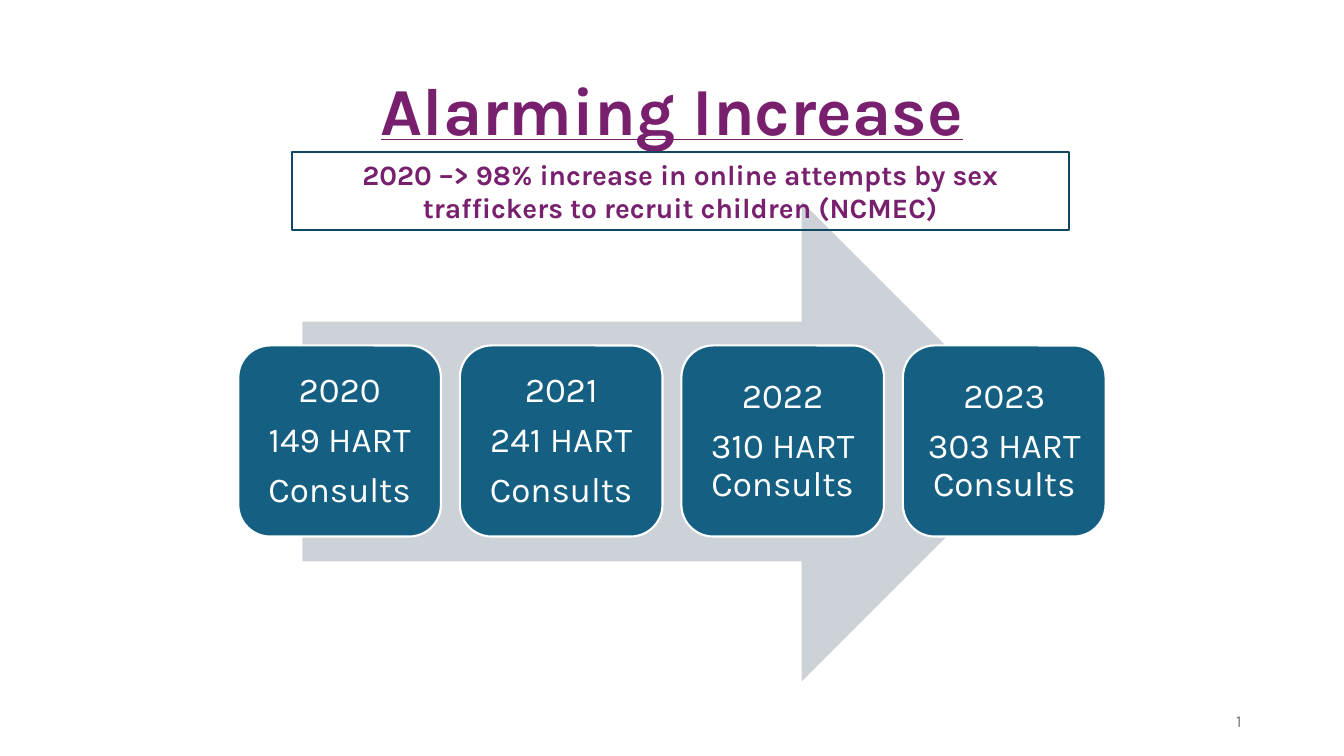
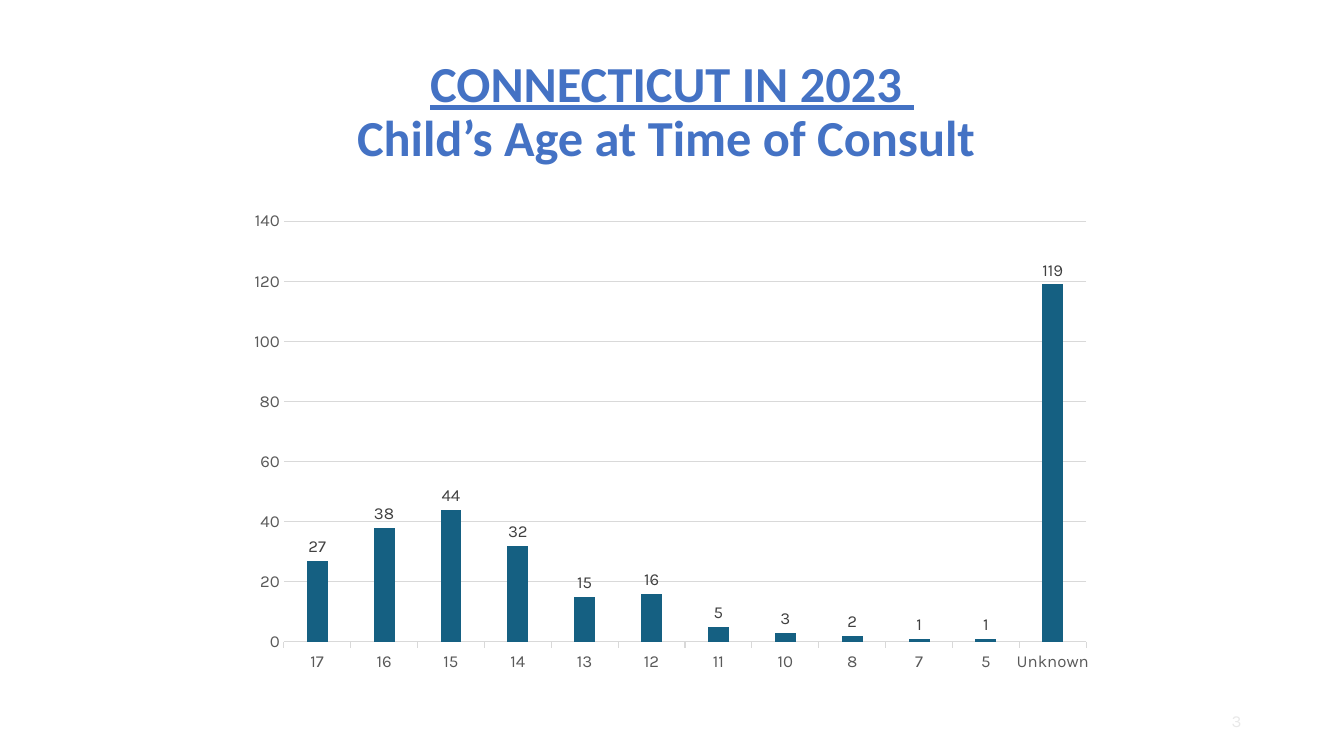
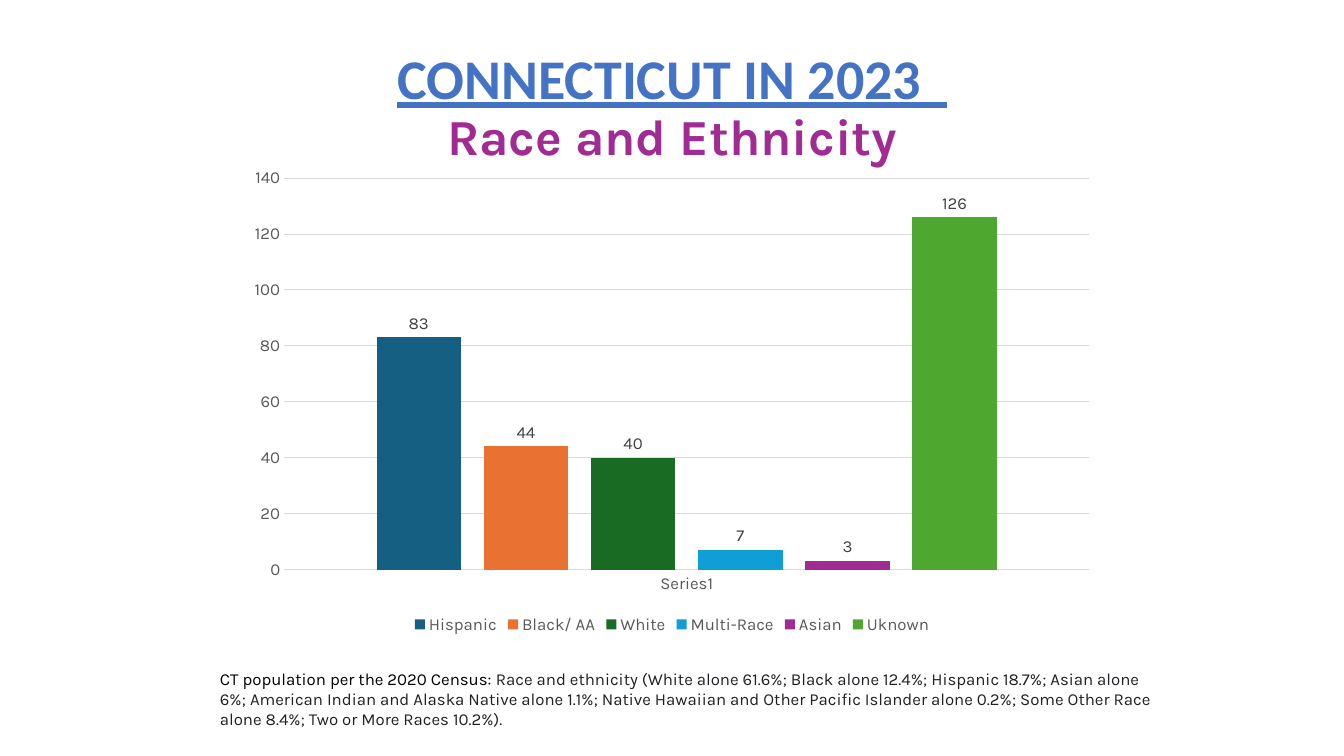
from dataclasses import dataclass

from pptx import Presentation
from pptx.chart.data import CategoryChartData
from pptx.dml.color import RGBColor
from pptx.enum.chart import XL_CHART_TYPE, XL_LABEL_POSITION, XL_LEGEND_POSITION, XL_TICK_MARK
from pptx.enum.shapes import MSO_SHAPE
from pptx.enum.text import MSO_ANCHOR, PP_ALIGN
from pptx.util import Emu, Pt

RECTANGLE = MSO_SHAPE.RECTANGLE
ROUNDED = MSO_SHAPE.ROUNDED_RECTANGLE
RIGHT_ARROW = MSO_SHAPE.RIGHT_ARROW
LEFT, CENTER, RIGHT = PP_ALIGN.LEFT, PP_ALIGN.CENTER, PP_ALIGN.RIGHT
TOP, MIDDLE = MSO_ANCHOR.TOP, MSO_ANCHOR.MIDDLE
COLUMNS = XL_CHART_TYPE.COLUMN_CLUSTERED
OUTSIDE_END = XL_LABEL_POSITION.OUTSIDE_END
LEGEND_BOTTOM = XL_LEGEND_POSITION.BOTTOM
TICK_NONE, TICK_OUTSIDE = XL_TICK_MARK.NONE, XL_TICK_MARK.OUTSIDE

BLANK_LAYOUT = 6
EMU_PER_PX = 9525


@dataclass(frozen=True)
class Theme:
    body_font: str = "Karla"
    heading_font: str = "Calibri"
    plum: str = "78206E"
    blue: str = "4472C4"
    teal: str = "156082"
    dark_teal: str = "104862"
    orange: str = "E97132"
    dark_green: str = "196B24"
    sky: str = "0F9ED5"
    magenta: str = "A02B93"
    green: str = "4EA72E"
    arrow_gray: str = "CCD2D8"
    grid_gray: str = "D9D9D9"
    axis_gray: str = "595959"
    label_gray: str = "404040"
    number_gray: str = "797979"
    faint_gray: str = "E8E8E8"
    ink: str = "202124"
    black: str = "000000"
    white: str = "FFFFFF"
    small: int = 12
    callout: int = 20
    card: int = 25
    heading: int = 36
    large_heading: int = 40
    display: int = 48


THEME = Theme()


def px(length):
    return Emu(length * EMU_PER_PX)


def set_format(target, **values):
    for name, value in values.items():
        setattr(target, name, value)


def set_font(font, size, color, name=THEME.body_font, **values):
    set_format(font, size=Pt(size), name=name, **values)
    font.color.rgb = RGBColor.from_string(color)


def set_line(line, color=None, width=0.75):
    if color is None:
        line.fill.background()
    else:
        line.color.rgb = RGBColor.from_string(color)
        line.width = Pt(width)


class Deck:
    """Holds the presentation, its theme and the slide being filled."""

    def __init__(self, theme):
        self.theme = theme
        self.presentation = Presentation()
        set_format(self.presentation, slide_width=px(1280), slide_height=px(720))
        self.slide = None

    def new_slide(self):
        layout = self.presentation.slide_layouts[BLANK_LAYOUT]
        self.slide = self.presentation.slides.add_slide(layout)

    def fill_text(self, shape, paragraphs, alignment=LEFT, anchor=TOP, line_break=False,
                  **spacing):
        """Each paragraph is a list of (text, font values); line_break separates its runs."""
        frame = shape.text_frame
        set_format(frame, word_wrap=True, vertical_anchor=anchor)
        for index, runs in enumerate(paragraphs):
            paragraph = frame.add_paragraph() if index else frame.paragraphs[0]
            set_format(paragraph, alignment=alignment, **spacing)
            for position, (text, font_values) in enumerate(runs):
                if line_break and position:
                    paragraph.add_line_break()
                run = paragraph.add_run()
                run.text = text
                set_font(run.font, **font_values)

    def text(self, box, paragraphs, **layout):
        shape = self.slide.shapes.add_textbox(*map(px, box))
        self.fill_text(shape, paragraphs, **layout)

    def title(self, box, *lines):
        lines = [(text, {"bold": True, **values}) for text, values in lines]
        self.text(box, [lines], alignment=CENTER, anchor=MIDDLE, line_break=True, line_spacing=0.9)

    def shape(self, kind, box, fill=None, line=None, width=0.75):
        shape = self.slide.shapes.add_shape(kind, *map(px, box))
        shape.shadow.inherit = False
        if fill is None:
            shape.fill.background()
        else:
            shape.fill.solid()
            shape.fill.fore_color.rgb = RGBColor.from_string(fill)
        set_line(shape.line, line, width)
        return shape

    def card(self, box, lines):
        shape = self.shape(ROUNDED, box, self.theme.teal, self.theme.white, 1.5)
        sides = ("left", "top", "right", "bottom")
        set_format(shape.text_frame, **{f"margin_{side}": px(10) for side in sides})
        font = {"size": self.theme.card, "color": self.theme.white}
        self.fill_text(shape, [[(line, font)] for line in lines], alignment=CENTER,
                       anchor=MIDDLE, line_spacing=0.9, space_after=Pt(8.75))

    def callout(self, box, text):
        shape = self.shape(RECTANGLE, box, line=self.theme.dark_teal, width=1.25)
        font = {"size": self.theme.callout, "color": self.theme.plum, "bold": True}
        self.fill_text(shape, [[(text, font)]], alignment=CENTER)

    def page_number(self, number, color):
        font = {"size": self.theme.small, "color": color}
        self.text((904, 667, 288, 38), [[(number, font)]], alignment=RIGHT, anchor=MIDDLE)

    def column_chart(self, box, categories, series, tick=TICK_NONE, legend=False):
        """Each series is (name, values, color)."""
        theme = self.theme
        data = CategoryChartData()
        data.categories = categories
        for name, values, _ in series:
            data.add_series(name, values)
        chart = self.slide.shapes.add_chart(COLUMNS, *map(px, box), data).chart
        set_format(chart, has_title=False, has_legend=legend)
        set_font(chart.font, theme.small, theme.axis_gray)
        if legend:
            set_format(chart.legend, position=LEGEND_BOTTOM, include_in_layout=False)
            set_font(chart.legend.font, theme.small, theme.axis_gray)

        plot = chart.plots[0]
        set_format(plot, gap_width=219, overlap=-27, vary_by_categories=False)
        for column, (_, _, color) in zip(plot.series, series):
            column.format.fill.solid()
            column.format.fill.fore_color.rgb = RGBColor.from_string(color)
            labels = column.data_labels
            set_format(labels, show_value=True, position=OUTSIDE_END)
            set_font(labels.font, theme.small, theme.label_gray)

        category_axis, value_axis = chart.category_axis, chart.value_axis
        for axis, mark, line in ((category_axis, tick, theme.grid_gray),
                                 (value_axis, TICK_NONE, None)):
            set_format(axis, major_tick_mark=mark, minor_tick_mark=TICK_NONE)
            set_font(axis.tick_labels.font, theme.small, theme.axis_gray)
            set_line(axis.format.line, line)
        set_format(value_axis, minimum_scale=0, maximum_scale=140, major_unit=20,
                   has_major_gridlines=True)
        set_line(value_axis.major_gridlines.format.line, theme.grid_gray)


def add_increase_slide(deck):
    theme = deck.theme
    deck.new_slide()
    deck.title((88, 38, 1104, 140),
               ("Alarming Increase",
                {"size": theme.display, "color": theme.plum, "underline": True}))
    deck.shape(RIGHT_ARROW, (288, 192, 704, 457), theme.arrow_gray)
    cards = (
        ("2020", "149 HART", "Consults"),
        ("2021", "241 HART", "Consults"),
        ("2022", "310 HART Consults"),
        ("2023", "303 HART Consults"),
    )
    for index, lines in enumerate(cards):
        deck.card((227 + 211 * index, 329, 193, 182), lines)
    deck.page_number("1", theme.number_gray)
    deck.callout((278, 145, 740, 74),
                 "2020 –> 98% increase in online attempts by sex "
                 "traffickers to recruit children (NCMEC)")


def add_age_slide(deck):
    theme = deck.theme
    heading = {"size": theme.heading, "color": theme.blue, "name": theme.heading_font}
    deck.new_slide()
    deck.title((88, 38, 1104, 140),
               ("CONNECTICUT IN 2023 ", {**heading, "underline": True}),
               ("Child’s Age at Time of Consult ", heading))
    ages = ("17", "16", "15", "14", "13", "12", "11", "10", "8", "7", "5", "Unknown")
    consults = (27, 38, 44, 32, 15, 16, 5, 3, 2, 1, 1, 119)
    deck.column_chart((226, 192, 828, 457), ages, [("Series 1", consults, theme.teal)],
                      tick=TICK_OUTSIDE)
    deck.page_number("3", theme.faint_gray)


def add_ethnicity_slide(deck):
    theme = deck.theme
    deck.new_slide()
    deck.title((226, 38, 828, 131),
               ("CONNECTICUT IN 2023  ",
                {"size": theme.large_heading, "color": theme.blue,
                 "name": theme.heading_font, "underline": True}),
               ("Race and Ethnicity", {"size": theme.heading, "color": theme.magenta}))
    groups = (
        ("Hispanic", (83,), theme.teal),
        ("Black/ AA", (44,), theme.orange),
        ("White", (40,), theme.dark_green),
        ("Multi-Race", (7,), theme.sky),
        ("Asian", (3,), theme.magenta),
        ("Uknown", (126,), theme.green),
    )
    deck.column_chart((226, 151, 828, 457), ("Series1",), groups, legend=True)
    census = [
        ("CT population per the 2020 Census: ", {"size": theme.small, "color": theme.black}),
        ("Race and ethnicity (White alone 61.6%; Black alone 12.4%; Hispanic 18.7%; "
         "Asian alone 6%; American Indian and Alaska Native alone 1.1%; Native Hawaiian "
         "and Other Pacific Islander alone 0.2%; Some Other Race alone 8.4%; "
         "Two or More Races 10.2%).", {"size": theme.small, "color": theme.ink}),
    ]
    deck.text((200, 632, 908, 68), [census])


def main():
    deck = Deck(THEME)
    add_increase_slide(deck)
    add_age_slide(deck)
    add_ethnicity_slide(deck)
    deck.presentation.save("out.pptx")


if __name__ == "__main__":
    main()
